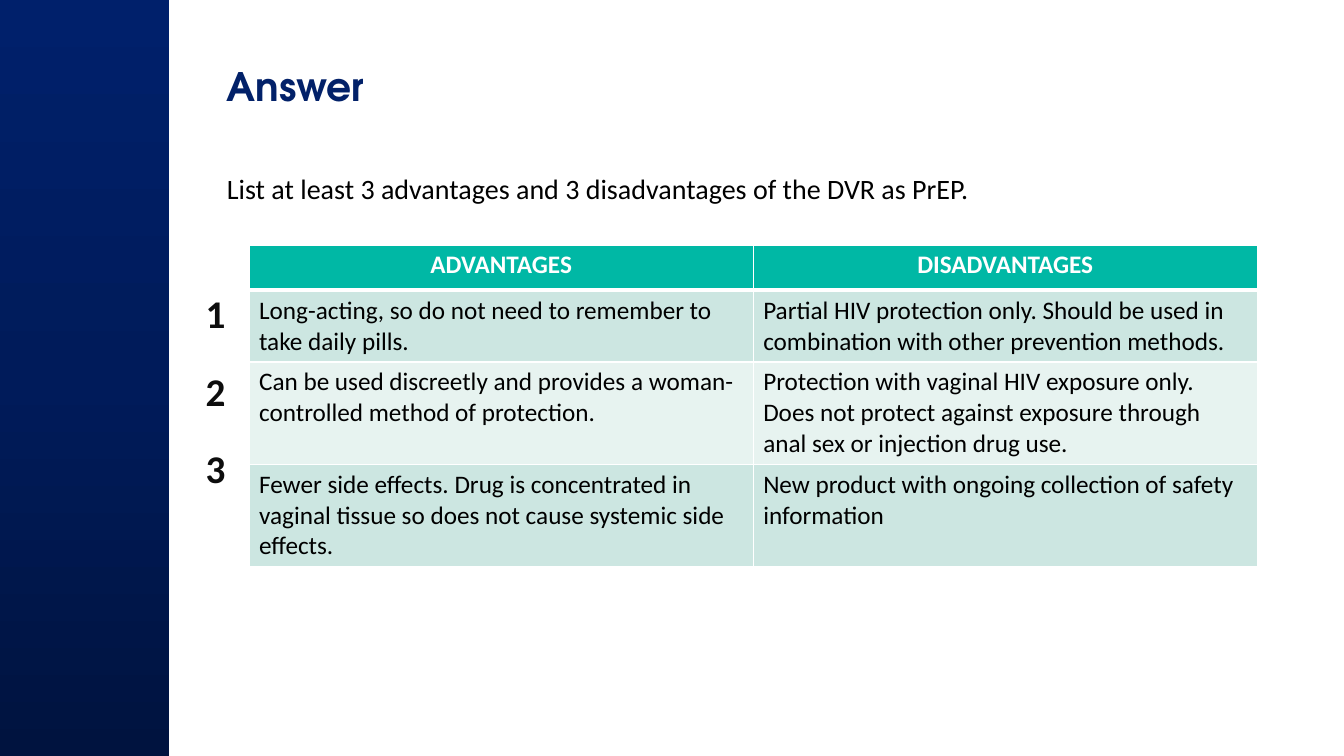
from copy import deepcopy

from lxml import etree
from pptx import Presentation
from pptx import util as u
from pptx.dml.color import RGBColor
from pptx.enum import shapes, text
from pptx.oxml.ns import qn

INK = {"navy": "022169", "black": "000000", "white": "FFFFFF", "num": "0D0D0D",
       "teal": "00B8A5", "mint": "CCE6E1", "pale": "E7F3F0"}
FADE = {0: "00133F", 0.5: "001B5A", 1: "00206B"}
ROWS = [
    ("ADVANTAGES", "DISADVANTAGES"),
    ("Long-acting, so do not need to remember to take daily pills.",
     "Partial HIV protection only. Should be used in combination with other prevention methods."),
    ("Can be used discreetly and provides a woman-controlled method of protection.",
     "Protection with vaginal HIV exposure only. Does not protect against exposure "
     "through anal sex or injection drug use."),
    ("Fewer side effects. Drug is concentrated in vaginal tissue so does not cause "
     "systemic side effects.",
     "New product with ongoing collection of safety information"),
]
HIGH = [0.45, 0.7, 1, 1]
FILLS = ["teal", "mint", "pale", "mint"]


def write(frame, words, size=18, ink="black", bold=False, face="Calibri", align="LEFT", after=0):
    para = frame.paragraphs[0]
    para.alignment = getattr(text.PP_ALIGN, align)
    para.space_before = u.Pt(0)
    para.space_after = u.Pt(after)
    run = para.add_run()
    run.text = words
    run.font.size = u.Pt(size)
    run.font.name = face
    run.font.bold = bold
    run.font.color.rgb = RGBColor.from_string(INK[ink])


def edge(cell, side, width):
    """Draw one white border of a table cell."""
    line = etree.SubElement(cell._tc.get_or_add_tcPr(), qn("a:ln" + side), w=str(u.Pt(width)))
    fill = etree.SubElement(line, qn("a:solidFill"))
    etree.SubElement(fill, qn("a:srgbClr"), val=INK["white"])


deck = Presentation()
deck.slide_width, deck.slide_height = u.Inches(13.33), u.Inches(7.5)
slide = deck.slides.add_slide(deck.slide_layouts[1])

# Side band, behind everything else
band = slide.shapes.add_shape(shapes.MSO_SHAPE.RECTANGLE, 0, 0, u.Inches(1.68), deck.slide_height)
band.shadow.inherit = False
band.line.fill.background()
band.fill.gradient()
band.fill.gradient_angle = 90
stops = band._element.spPr.find(qn("a:gradFill")).find(qn("a:gsLst"))
stops.insert(1, deepcopy(stops[0]))
for stop, (place, tint) in zip(band.fill.gradient_stops, FADE.items()):
    stop.position = place
    stop.color.rgb = RGBColor.from_string(tint)
slide.shapes._spTree.insert(2, band._element)

# Title and question
title, body = slide.placeholders
for holder, top, high in ((title, 0.57, 0.92), (body, 1.65, 0.61)):
    holder.left, holder.top = u.Inches(2.15), u.Inches(top)
    holder.width, holder.height = u.Inches(10), u.Inches(high)
    holder.text_frame.auto_size = text.MSO_AUTO_SIZE.NONE
    holder.text_frame.vertical_anchor = text.MSO_ANCHOR.TOP
props = body.text_frame.paragraphs[0]._p.get_or_add_pPr()
props.set("marL", "0")
props.set("indent", "0")
etree.SubElement(props, qn("a:buNone"))
write(title.text_frame, "Answer", size=28, ink="navy", bold=True, face="TeX Gyre Adventor")
write(body.text_frame, "List at least 3 advantages and 3 disadvantages of the DVR as PrEP.",
      size=20, after=6)

# Table of answers
table = slide.shapes.add_table(len(ROWS), 2, u.Inches(2.47), u.Inches(2.43),
                               u.Inches(10), u.Inches(sum(HIGH))).table
for r, (pair, high, shade) in enumerate(zip(ROWS, HIGH, FILLS)):
    table.rows[r].height = u.Inches(high)
    head = r == 0
    for c, words in enumerate(pair):
        cell = table.cell(r, c)
        for side in "LRTB":
            thick = (head and side == "B") or (r == 1 and side == "T")
            edge(cell, side, 3 if thick else 1)
        cell.fill.solid()
        cell.fill.fore_color.rgb = RGBColor.from_string(INK[shade])
        write(cell.text_frame, words, ink="white" if head else "black", bold=head,
              align="CENTER" if head else "LEFT")

# Row numbers
for n in range(3):
    mark = slide.shapes.add_textbox(u.Inches(1.94), u.Inches(2.82 + 0.77 * n),
                                    u.Inches(0.4), u.Inches(0.57))
    mark.text_frame.word_wrap = False
    mark.text_frame.auto_size = text.MSO_AUTO_SIZE.SHAPE_TO_FIT_TEXT
    write(mark.text_frame, str(n + 1), size=28, ink="num", bold=True)

deck.save("out.pptx")
